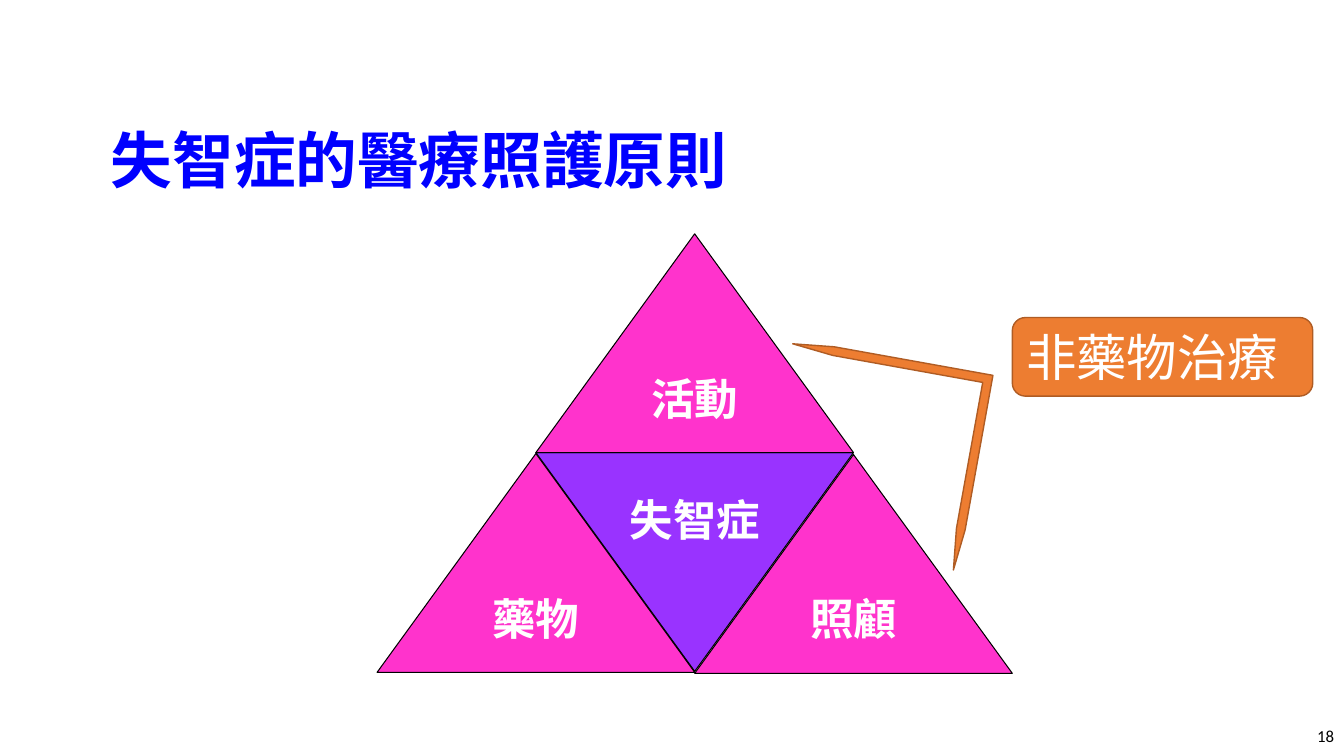
from pptx import Presentation
from pptx.dml.color import RGBColor
from pptx.enum import shapes, text
from pptx.util import Inches, Pt


def paint(shape, fill, line, width):
    shape.shadow.inherit = False
    shape.fill.solid()
    shape.fill.fore_color.rgb = RGBColor.from_string(fill)
    shape.line.color.rgb = RGBColor.from_string(line)
    shape.line.width = Pt(width)


def write(shape, words, size, font, color, align, bold=False, wrap=True):
    frame = shape.text_frame
    frame.text = words
    frame.word_wrap = wrap
    frame.auto_size = text.MSO_AUTO_SIZE.NONE
    frame.vertical_anchor = text.MSO_ANCHOR.MIDDLE
    paragraph = frame.paragraphs[0]
    paragraph.alignment = align
    paragraph.font.size = Pt(size)
    paragraph.font.name = font
    paragraph.font.bold = bold
    paragraph.font.color.rgb = RGBColor.from_string(color)


LEFT, CENTER, RIGHT = text.PP_ALIGN.LEFT, text.PP_ALIGN.CENTER, text.PP_ALIGN.RIGHT
SHAPE = shapes.MSO_SHAPE

prs = Presentation()
prs.slide_width, prs.slide_height = Inches(13.33), Inches(7.5)
slide = prs.slides.add_slide(prs.slide_layouts[5])

title = slide.shapes.title
title.left, title.top = Inches(1), Inches(1)
title.width, title.height = Inches(11.33), Inches(1.25)
write(title, "失智症的醫療照護原則", 44, "Calibri", "0000FF", LEFT, bold=True)
title.text_frame.paragraphs[0].line_spacing = 0.9

page_number = slide.shapes.add_textbox(Inches(10.33), Inches(7.1), Inches(3), Inches(0.4))
write(page_number, "18", 12, "Calibri", "000000", RIGHT)

# Pyramid of care: three upright triangles around an inverted one
side, height = 3.15, 2.17
pyramid_left, pyramid_top = 3.74, 2.32
middle_left, base_top = pyramid_left + side / 2, pyramid_top + height

core = slide.shapes.add_shape(SHAPE.ISOSCELES_TRIANGLE, Inches(middle_left), Inches(base_top),
                              Inches(side), Inches(height))
core.rotation = 180
paint(core, "9933FF", "000000", 0.75)
core_label = slide.shapes.add_textbox(Inches(6.1), Inches(4.84), Inches(1.58), Inches(0.63))
write(core_label, "失智症", 31, "Times New Roman", "FFFFFF", CENTER, bold=True)

for label, left, top, font in [
    ("藥物", pyramid_left, base_top + 0.01, "Noto Sans CJK SC"),
    ("活動", middle_left, pyramid_top, "Times New Roman"),
    ("照顧", pyramid_left + side, base_top + 0.02, "Times New Roman"),
]:
    care = slide.shapes.add_shape(SHAPE.ISOSCELES_TRIANGLE, Inches(left), Inches(top),
                                  Inches(side), Inches(height))
    paint(care, "FF33CC", "000000", 0.75)
    write(care, label, 31, font, "FFFFFF", CENTER, bold=True, wrap=False)

# Non-drug therapy covers activities and caregiving
therapy = slide.shapes.add_shape(SHAPE.ROUNDED_RECTANGLE, Inches(10.04), Inches(3.15),
                                 Inches(2.98), Inches(0.78))
paint(therapy, "ED7D31", "AF5C24", 1)
write(therapy, "非藥物治療", 36, "Noto Sans CJK SC", "FFFFFF", LEFT)

therapy_arrow = slide.shapes.add_shape(SHAPE.LEFT_UP_ARROW, Inches(7.7), Inches(3.51),
                                       Inches(1.97), Inches(2.01))
therapy_arrow.rotation = 280.2
for index, value in enumerate([0.25, 0.022, 0.209]):
    therapy_arrow.adjustments[index] = value
paint(therapy_arrow, "ED7D31", "AF5C24", 1)

prs.save("out.pptx")
